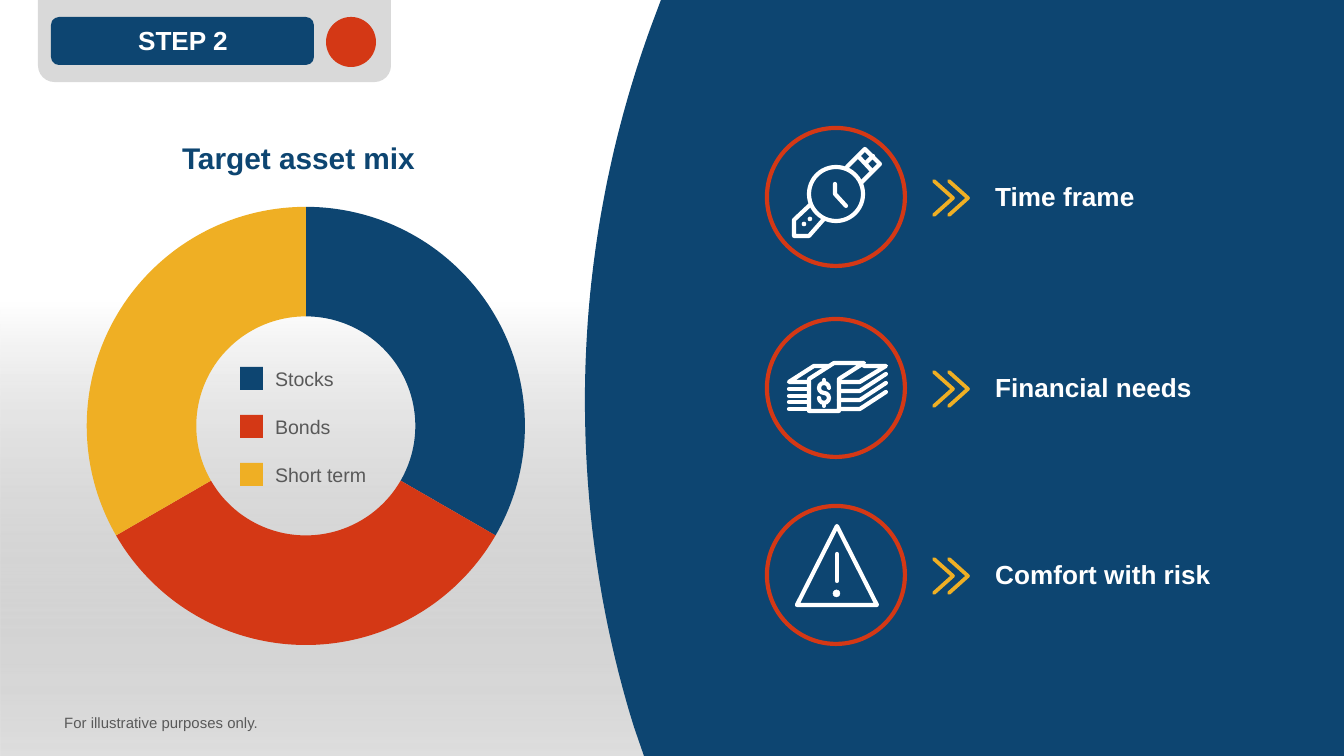
from math import cos, radians, sin

from lxml import etree
from pptx import Presentation
from pptx.chart.data import CategoryChartData
from pptx.dml.color import RGBColor
from pptx.enum.chart import XL_CHART_TYPE
from pptx.enum.shapes import MSO_CONNECTOR, MSO_SHAPE
from pptx.enum.text import MSO_ANCHOR, MSO_AUTO_SIZE, PP_ALIGN
from pptx.oxml.ns import qn
from pptx.util import Pt

SCALE = 914400 * 10 / 1344
WIDTH, HEIGHT = 1344, 756
NAVY = RGBColor(0x0D, 0x45, 0x71)
RED = RGBColor(0xD4, 0x38, 0x15)
GOLD = RGBColor(0xEF, 0xAF, 0x24)
WHITE = RGBColor(0xFF, 0xFF, 0xFF)
PALE = RGBColor(0xD9, 0xD9, 0xD9)
MID_GRAY = RGBColor(0x80, 0x80, 0x80)
TEXT_GRAY = RGBColor(0x59, 0x59, 0x59)
RECT, OVAL = MSO_SHAPE.RECTANGLE, MSO_SHAPE.OVAL
ROUNDED, TAB = MSO_SHAPE.ROUNDED_RECTANGLE, MSO_SHAPE.ROUND_2_SAME_RECTANGLE
LEFT, CENTER = PP_ALIGN.LEFT, PP_ALIGN.CENTER
ASSETS = [("Stocks", NAVY), ("Bonds", RED), ("Short term", GOLD)]


def px(*lengths):
    """Turn pixel lengths into EMU."""
    return [round(length * SCALE) for length in lengths]


def add_block(page, kind, box, fill=None, line=None, width=2.25):
    """Add a preset shape with an optional fill and outline."""
    shape = page.shapes.add_shape(kind, *px(*box))
    shape.shadow.inherit = False
    if fill is None:
        shape.fill.background()
    else:
        shape.fill.solid()
        shape.fill.fore_color.rgb = fill
    if line is None:
        shape.line.fill.background()
    else:
        shape.line.color.rgb = line
        shape.line.width = Pt(width)
    return shape


def add_outline(page, points, closed=False):
    """Add a freeform through the given pixel points."""
    start, *rest = [px(*point) for point in points]
    builder = page.shapes.build_freeform(*start, scale=1.0)
    builder.add_line_segments(rest, close=closed)
    shape = builder.convert_to_shape()
    shape.shadow.inherit = False
    return shape


def add_stroke(page, origin, points, color=WHITE, width=2.25, closed=False):
    """Draw a round-ended line through points relative to the origin."""
    left, top = origin
    placed = [(left + x, top + y) for x, y in points]
    if len(placed) == 2:
        stroke = page.shapes.add_connector(MSO_CONNECTOR.STRAIGHT, *px(*placed[0], *placed[1]))
        etree.SubElement(stroke._element.spPr, qn("a:effectLst"))
    else:
        stroke = add_outline(page, placed, closed)
        stroke.fill.background()
    stroke.line.color.rgb = color
    stroke.line.width = Pt(width)
    outline = stroke.line._get_or_add_ln()
    outline.set("cap", "rnd")
    etree.SubElement(outline, qn("a:round"))


def write(frame, text, size, color, bold=False, align=LEFT, spacing=1.0):
    """Fill a text frame with one formatted paragraph."""
    frame.text = text
    frame.auto_size = MSO_AUTO_SIZE.NONE
    frame.vertical_anchor = MSO_ANCHOR.TOP
    para = frame.paragraphs[0]
    para.alignment, para.line_spacing = align, spacing
    para.font.name, para.font.size = "Arial", Pt(size)
    para.font.bold, para.font.color.rgb = bold, color


def add_label(page, box, text, size, color, wrap=True, **style):
    """Add a text box."""
    frame = page.shapes.add_textbox(*px(*box)).text_frame
    write(frame, text, size, color, **style)
    frame.word_wrap = wrap


def bezier(start, pull_a, pull_b, end, steps=40):
    """Return points along a cubic curve."""
    return [
        tuple((1 - t) ** 3 * a + 3 * t * (1 - t) ** 2 * b + 3 * t * t * (1 - t) * c + t ** 3 * d
              for a, b, c, d in zip(start, pull_a, pull_b, end))
        for t in (step / steps for step in range(steps + 1))
    ]


def arc(center_x, center_y, radius, first, last, step):
    """Return points along an arc given in degrees."""
    return [(center_x + radius * cos(radians(angle)), center_y - radius * sin(radians(angle)))
            for angle in range(first, last + step, step)]


def draw_backdrop(page):
    """Draw the fading ground and the curved navy panel."""
    ground = add_block(page, RECT, (0, 0, WIDTH, HEIGHT), WHITE)
    ground.fill.gradient()
    ground.fill.gradient_angle = 90
    for stop, color, position in zip(ground.fill.gradient_stops, (MID_GRAY, WHITE), (0, 0.6)):
        stop.color.rgb = color
        stop.position = position
    tint = ground._element.xpath(".//a:gs/a:srgbClr")[0]
    etree.SubElement(tint, qn("a:alpha")).set("val", "25000")

    lower = bezier((634, 727), (602, 624), (585, 515), (585, 400))
    upper = bezier((585, 400), (585, 269), (609, 141), (652, 24))
    corners = [(661, 0), (WIDTH, 0), (WIDTH, HEIGHT), (644, HEIGHT)]
    panel = add_outline(page, corners + lower + upper[1:], closed=True)
    panel.fill.solid()
    panel.fill.fore_color.rgb = NAVY
    panel.line.fill.background()


def draw_watch(page, origin):
    """Draw a wristwatch icon."""
    left, top = origin
    add_block(page, OVAL, (left + 42, top + 39, 54, 54), line=WHITE)
    for points in (
        [(68, 56), (68, 66), (79, 78)],
        [(43, 77), (27, 92), (27, 108), (42, 108), (57, 91)],
        [(80, 39), (98, 21), (113, 36), (94, 55)],
        [(92, 29), (105, 43)],
        [(99, 35), (106, 28)],
    ):
        add_stroke(page, origin, points)
    for x, y in ((35, 94), (41, 89)):
        add_block(page, OVAL, (left + x, top + y, 4, 4), WHITE, WHITE, 0.25)


def draw_money(page, origin):
    """Draw an icon of stacked bank notes."""
    note = [(42, 92), (42, 60), (67, 44), (97, 44), (72, 60), (72, 92)]
    add_stroke(page, origin, note, closed=True)
    strokes = [[(42, 63), (22, 63), (47, 47), (62, 47)],
               [(97, 47), (119, 47), (93, 63), (72, 63)],
               arc(57, 69, 5, 0, 270, 30) + arc(57, 79, 5, 90, -180, -30),
               [(57, 61), (57, 64)], [(57, 84), (57, 87)]]
    strokes += [[(22, y), (42, y)] for y in (70, 77, 83, 90)]
    strokes += [[(72, y), (93, y), (119, y - 17)] for y in (72, 81, 90)]
    for points in strokes:
        add_stroke(page, origin, points)


def draw_warning(page, origin):
    """Draw a warning triangle icon."""
    left, top = origin
    add_stroke(page, origin, [(70, 20), (110, 99), (30, 99)], closed=True)
    add_stroke(page, origin, [(70, 48), (70, 75)])
    add_block(page, OVAL, (left + 66, top + 84, 7, 7), WHITE, WHITE, 0.25)


def draw_factor(page, left, top, text, draw_icon):
    """Draw one ringed icon with its chevrons and label."""
    add_block(page, OVAL, (left, top, 138, 138), line=RED)
    draw_icon(page, (left, top))
    for x in (167, 182):
        add_stroke(page, (left + x, top + 53), [(0, 0), (19, 17), (0, 34)], GOLD, 2)
    add_label(page, (left + 215, top + 49, 292, 43), text, 14, WHITE, bold=True, spacing=0.9)


def draw_asset_mix(page, left, top):
    """Draw the doughnut chart, its legend and the slide title."""
    data = CategoryChartData()
    data.categories = ["1", "2", "3"]
    data.add_series("Series 1", [33, 33, 33])
    box = px(left, top, 523, 512)
    chart = page.shapes.add_chart(XL_CHART_TYPE.DOUGHNUT, *box, data).chart
    chart.has_legend = chart.has_title = False
    chart.font.name, chart.font.size = "Calibri", Pt(18)
    for index, (name, color) in enumerate(ASSETS):
        point = chart.plots[0].series[0].points[index].format
        point.fill.solid()
        point.fill.fore_color.rgb = color
        point.line.fill.background()
        y = top + 199 + 48 * index
        add_block(page, RECT, (left + 193, y, 23, 23), color)
        add_label(page, (left + 215, y - 7, 150, 38), name, 10.5, TEXT_GRAY)

    space = chart._chartSpace
    space.xpath(".//c:holeSize")[0].set("val", "70")
    area = space.xpath(".//c:plotArea")[0]
    for old in area.xpath("c:layout"):
        area.remove(old)
    layout = etree.Element(qn("c:layout"))
    manual = etree.SubElement(layout, qn("c:manualLayout"))
    for tag, value in (("layoutTarget", "inner"), ("xMode", "edge"), ("yMode", "edge"),
                       ("x", "0.076"), ("y", "0.076"), ("w", "0.838"), ("h", "0.856")):
        etree.SubElement(manual, qn("c:" + tag)).set("val", value)
    area.insert(0, layout)

    title = page.shapes.title
    title.left, title.top, title.width, title.height = px(left + 47, top - 35, 409, 50)
    write(title.text_frame, "Target asset mix", 16, NAVY, bold=True, align=CENTER)
    page.shapes._spTree.append(title._element)


def draw_step_tab(page, left, top):
    """Draw the step tab hanging from the top edge."""
    tab = add_block(page, TAB, (left, top, 353, 82), PALE)
    tab.rotation = 180
    tab.adjustments[0] = 0.2
    add_block(page, ROUNDED, (left + 13, top + 17, 263, 48), NAVY)
    add_label(page, (left + 12, top + 24, 266, 40), "STEP 2", 14, WHITE,
              bold=True, align=CENTER, spacing=0.8)
    add_block(page, OVAL, (left + 288, top + 17, 50, 50), RED)


def main():
    """Build and save the deck."""
    deck = Presentation()
    deck.slide_width, deck.slide_height = px(WIDTH, HEIGHT)
    page = deck.slides.add_slide(deck.slide_layouts[5])
    draw_backdrop(page)
    draw_factor(page, 767, 128, "Time frame", draw_watch)
    draw_factor(page, 767, 319, "Financial needs", draw_money)
    draw_factor(page, 767, 506, "Comfort with risk", draw_warning)
    draw_asset_mix(page, 47, 168)
    draw_step_tab(page, 38, 0)
    add_label(page, (51, 707, 224, 32), "For illustrative purposes only.", 8, TEXT_GRAY, wrap=False)
    deck.save("out.pptx")


if __name__ == "__main__":
    main()
